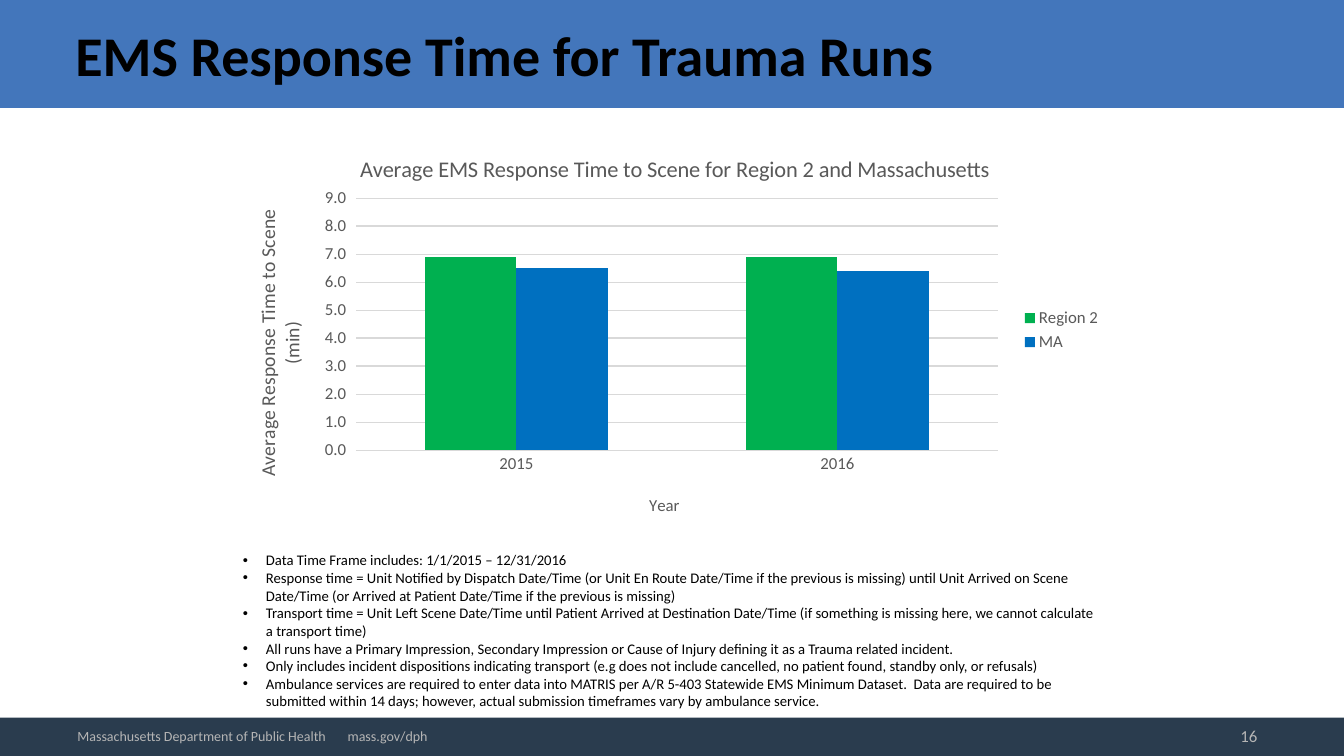
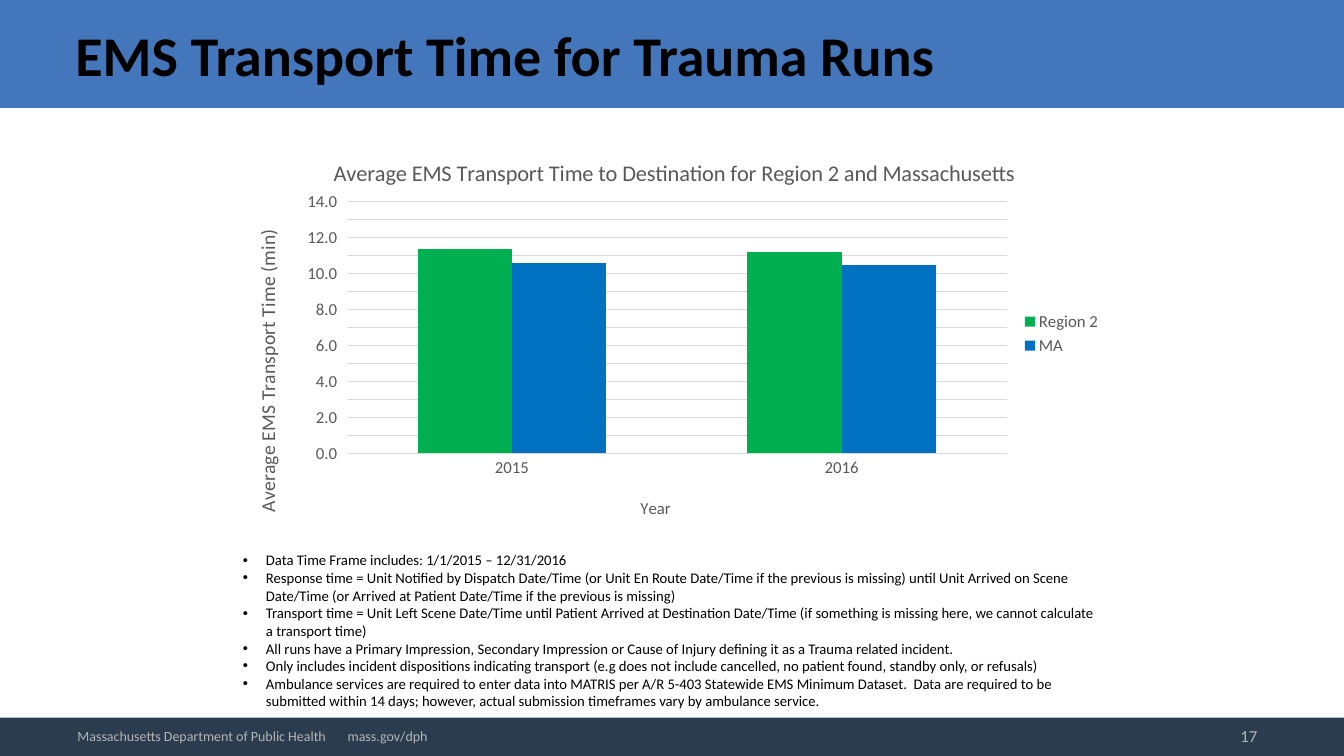
from dataclasses import dataclass

from lxml import etree
from pptx import Presentation
from pptx import util as u
from pptx.chart.data import CategoryChartData
from pptx.dml.color import RGBColor
from pptx.enum import chart as charts, shapes, text
from pptx.oxml.ns import qn

FONT = "Calibri"
COLORS = {
    "band": "4376BB",
    "footer": "2A3C4E",
    "footer_text": "B5B5B5",
    "ink": "000000",
    "chart_text": "595959",
    "grid": "D9D9D9",
    "Region 2": "00B050",
    "MA": "0070C0",
}
PAGE_WIDTH, PAGE_HEIGHT = 13.33, 7.5
COLUMN_LEFT, COLUMN_WIDTH = 2.31, 8.72
BULLET_INDENT = 0.23
YEARS = ("2015", "2016")
FOOTER = "Massachusetts Department of Public Health\tmass.gov/dph"
FOOTER_TAB = 2.68
NOTES = (
    "Data Time Frame includes: 1/1/2015 – 12/31/2016",
    "Response time = Unit Notified by Dispatch Date/Time (or Unit En Route Date/Time "
    "if the previous is missing) until Unit Arrived on Scene Date/Time (or Arrived at "
    "Patient Date/Time if the previous is missing)",
    "Transport time = Unit Left Scene Date/Time until Patient Arrived at Destination "
    "Date/Time (if something is missing here, we cannot calculate a transport time)",
    "All runs have a Primary Impression, Secondary Impression or Cause of Injury "
    "defining it as a Trauma related incident.",
    "Only includes incident dispositions indicating transport (e.g does not include "
    "cancelled, no patient found, standby only, or refusals)",
    "Ambulance services are required to enter data into MATRIS per A/R 5-403 Statewide "
    "EMS Minimum Dataset.  Data are required to be submitted within 14 days; however, "
    "actual submission timeframes vary by ambulance service.",
)


@dataclass(frozen=True)
class TimeSlide:
    title: str
    number: int
    chart_title: str
    value_title: str
    top: float
    height: float
    maximum: int
    series: dict[str, tuple[float, ...]]
    # Places inside the chart, as shares of its width and height
    title_at: tuple[float, float]
    value_title_at: tuple[float, float]
    year_at: tuple[float, float]
    plot_at: tuple[float, float, float, float]


SLIDES = (
    TimeSlide(
        "EMS Response Time for Trauma Runs", 16,
        "Average EMS Response Time to Scene for Region 2 and Massachusetts",
        "Average Response Time to Scene (min)", 1.29, 3.97, 9,
        {"Region 2": (6.9, 6.9), "MA": (6.5, 6.4)},
        (0.14, 0.05), (0.02, 0.19), (0.47, 0.9), (0.14, 0.17, 0.73, 0.63),
    ),
    TimeSlide(
        "EMS Transport Time for Trauma Runs", 17,
        "Average EMS Transport Time to Destination for Region 2 and Massachusetts",
        "Average EMS Transport Time (min)", 1.33, 3.96, 14,
        {"Region 2": (11.4, 11.2), "MA": (10.6, 10.5)},
        (0.11, 0.05), (0.02, 0.23), (0.46, 0.9), (0.13, 0.17, 0.75, 0.63),
    ),
)


def rgb(name: str) -> RGBColor:
    return RGBColor.from_string(COLORS[name])


def set_font(font, size: float, color: str, bold: bool = False) -> None:
    font.name, font.size, font.bold = FONT, u.Pt(size), bold
    font.color.rgb = rgb(color)


def add_band(page, top: float, height: float, color: str) -> None:
    band = page.shapes.add_shape(
        shapes.MSO_SHAPE.RECTANGLE, u.Inches(0), u.Inches(top),
        u.Inches(PAGE_WIDTH), u.Inches(height))
    band.shadow.inherit = False
    band.fill.solid()
    band.fill.fore_color.rgb = rgb(color)
    band.line.fill.background()


def add_text(page, left: float, top: float, width: float, height: float,
             lines: tuple[str, ...], size: float, color: str, bold: bool = False,
             anchor=text.MSO_ANCHOR.MIDDLE, align=text.PP_ALIGN.LEFT) -> list:
    box = page.shapes.add_textbox(
        u.Inches(left), u.Inches(top), u.Inches(width), u.Inches(height))
    frame = box.text_frame
    frame.word_wrap = True
    frame.vertical_anchor = anchor
    for index, line in enumerate(lines):
        para = frame.add_paragraph() if index else frame.paragraphs[0]
        para.text, para.alignment = line, align
        set_font(para.font, size, color, bold)
    return list(frame.paragraphs)


def insert_before_defaults(para, tag: str):
    """Add a paragraph property ahead of its default run properties."""
    properties = para._p.get_or_add_pPr()
    child = etree.Element(qn(tag))
    defaults = properties.find(qn("a:defRPr"))
    if defaults is None:
        properties.append(child)
    else:
        defaults.addprevious(child)
    return child


def add_notes(page) -> None:
    paras = add_text(page, COLUMN_LEFT, 5.42, COLUMN_WIDTH, 1.69, NOTES, 10.5,
                     "ink", anchor=text.MSO_ANCHOR.TOP)
    indent = u.Inches(BULLET_INDENT)
    for para in paras:
        properties = para._p.get_or_add_pPr()
        properties.set("marL", str(indent))
        properties.set("indent", str(-indent))
        insert_before_defaults(para, "a:buFont").set("typeface", "Arial")
        insert_before_defaults(para, "a:buChar").set("char", "•")


def add_footer(page, number: int) -> None:
    add_text(page, 9.58, 7.1, 2.99, 0.4, (str(number),), 12, "footer_text",
             align=text.PP_ALIGN.RIGHT)
    para = add_text(page, 0.67, 7.12, 4.17, 0.37, (FOOTER,), 10, "footer_text")[0]
    tab = etree.SubElement(insert_before_defaults(para, "a:tabLst"), qn("a:tab"))
    tab.set("pos", str(u.Inches(FOOTER_TAB)))
    tab.set("algn", "l")


def make_layout(place: tuple[float, ...], inner: bool = False):
    layout = etree.Element(qn("c:layout"))
    manual = etree.SubElement(layout, qn("c:manualLayout"))
    settings = [("layoutTarget", "inner")] if inner else []
    settings += [("xMode", "edge"), ("yMode", "edge")]
    settings += zip("xywh", place)
    for tag, value in settings:
        etree.SubElement(manual, qn(f"c:{tag}")).set("val", str(value))
    return layout


def set_title(title, words: str, size: float, place: tuple[float, float],
              upright: bool = False) -> None:
    title.text_frame.text = words
    set_font(title.text_frame.paragraphs[0].font, size, "chart_text")
    element = title._element
    for old in element.findall(qn("c:layout")):
        element.remove(old)
    element.find(qn("c:tx")).addnext(make_layout(place))
    if upright:
        body = element.find(f".//{qn('a:bodyPr')}")
        body.set("rot", "-5400000")
        body.set("vert", "horz")


def add_time_chart(page, content: TimeSlide) -> None:
    data = CategoryChartData(number_format="0.0")
    data.categories = YEARS
    for name, values in content.series.items():
        data.add_series(name, values)
    chart = page.shapes.add_chart(
        charts.XL_CHART_TYPE.COLUMN_CLUSTERED, u.Inches(COLUMN_LEFT),
        u.Inches(content.top), u.Inches(COLUMN_WIDTH), u.Inches(content.height),
        data).chart
    set_font(chart.font, 10, "ink")
    chart.has_title = True
    set_title(chart.chart_title, content.chart_title, 16, content.title_at)

    # Columns
    plot = chart.plots[0]
    plot.vary_by_categories = False
    plot.gap_width, plot.overlap = 150, 0
    for series in plot.series:
        series.format.fill.solid()
        series.format.fill.fore_color.rgb = rgb(series.name)
    area = chart._chartSpace.find(f".//{qn('c:plotArea')}")
    for old in area.findall(qn("c:layout")):
        area.remove(old)
    area.insert(0, make_layout(content.plot_at, inner=True))

    # Axes
    years, minutes = chart.category_axis, chart.value_axis
    for axis in (years, minutes):
        set_font(axis.tick_labels.font, 12, "chart_text")
    set_title(years.axis_title, "Year", 12, content.year_at)
    set_title(minutes.axis_title, content.value_title, 14,
              content.value_title_at, upright=True)
    years.major_tick_mark = charts.XL_TICK_MARK.NONE
    minutes.major_tick_mark = charts.XL_TICK_MARK.OUTSIDE
    minutes.minimum_scale, minutes.maximum_scale = 0, content.maximum
    minutes.major_unit = 1
    minutes.tick_labels.number_format = "0.0"
    minutes.tick_labels.number_format_is_linked = False
    minutes.format.line.fill.background()
    for line in (years.format.line, minutes.major_gridlines.format.line):
        line.color.rgb = rgb("grid")
        line.width = u.Pt(0.75)

    # Legend
    chart.has_legend = True
    chart.legend.position = charts.XL_LEGEND_POSITION.RIGHT
    chart.legend.include_in_layout = False
    set_font(chart.legend.font, 12, "chart_text")


def add_page(deck, content: TimeSlide) -> None:
    page = deck.slides.add_slide(deck.slide_layouts[6])
    add_band(page, 0, 1.07, "band")
    add_band(page, 7.12, PAGE_HEIGHT - 7.12, "footer")
    add_notes(page)
    add_text(page, 0.65, 0.06, 12, 0.96, (content.title,), 40, "ink", bold=True)
    add_time_chart(page, content)
    add_footer(page, content.number)


def main() -> None:
    deck = Presentation()
    deck.slide_width = u.Inches(PAGE_WIDTH)
    deck.slide_height = u.Inches(PAGE_HEIGHT)
    for content in SLIDES:
        add_page(deck, content)
    deck.save("out.pptx")


if __name__ == "__main__":
    main()
